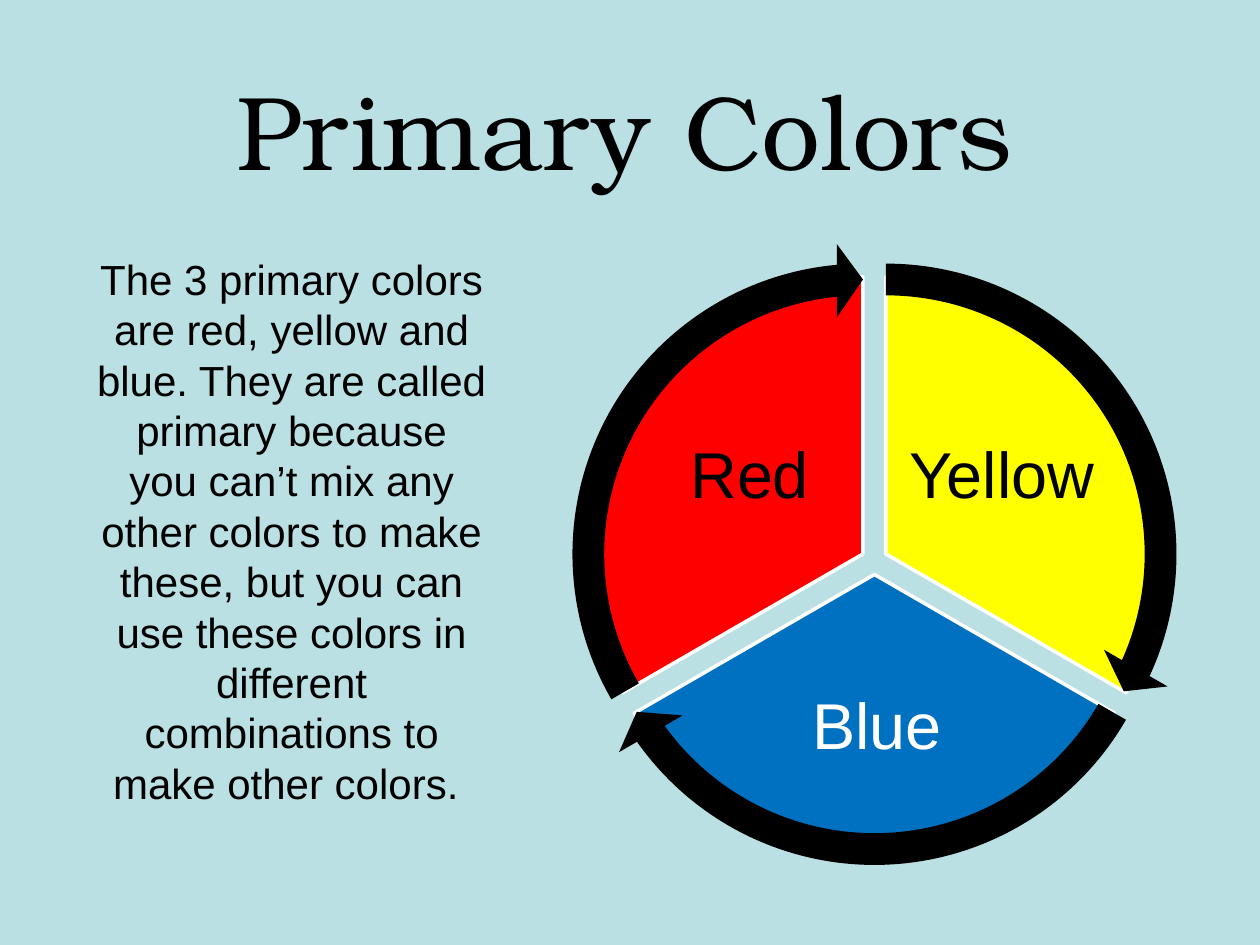
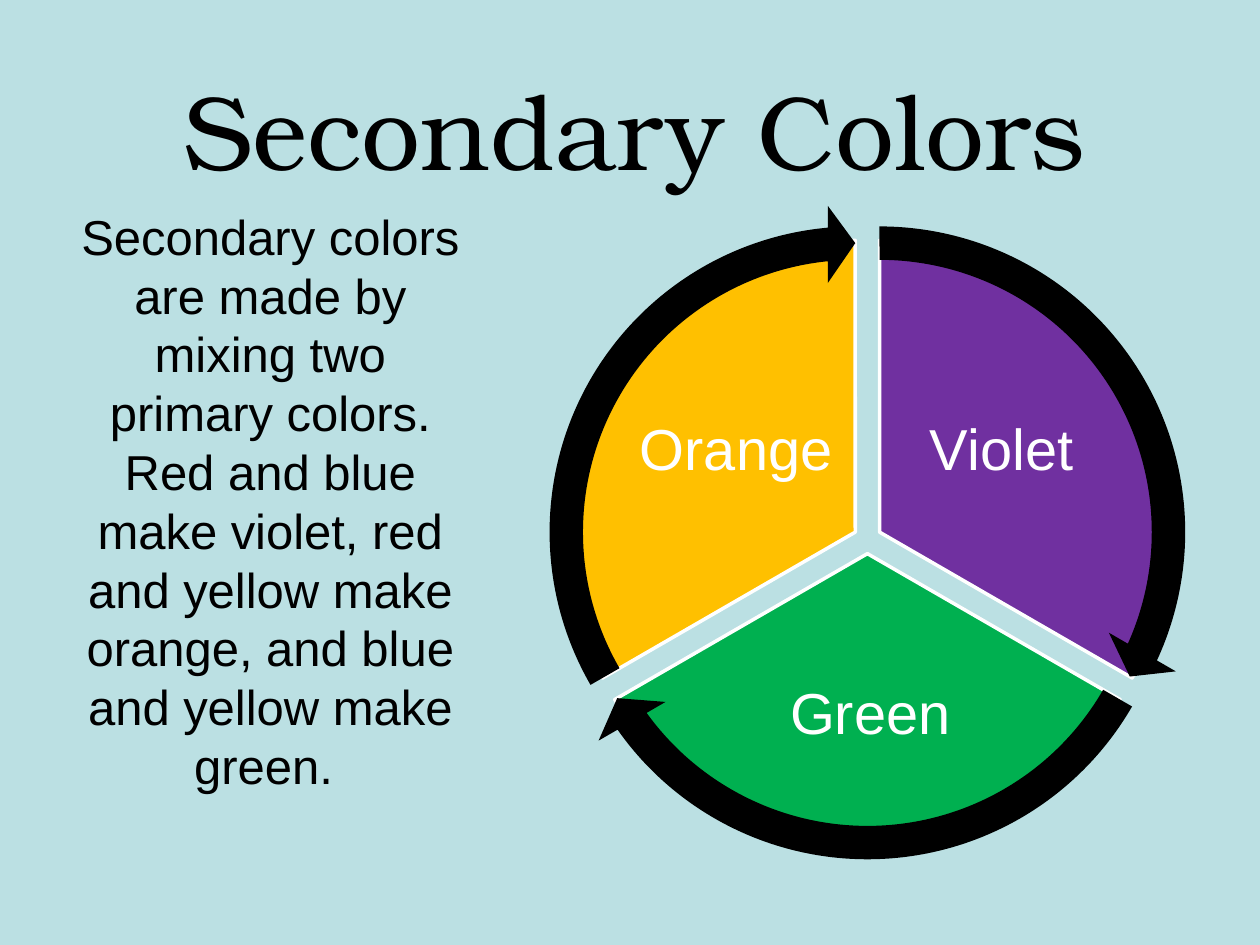
"""Build two slides on primary and secondary colors, each with a three-part color wheel."""
from pptx import Presentation
from pptx import util as u
from pptx.dml.color import RGBColor
from pptx.enum import shapes, text
from lxml import etree

Pt = u.Pt
PALE_BLUE = RGBColor(0xBB, 0xE0, 0xE3)
BLACK = RGBColor(0, 0, 0)
WHITE = RGBColor(0xFF, 0xFF, 0xFF)
YELLOW = RGBColor(0xFF, 0xFF, 0)
BLUE = RGBColor(0, 0x70, 0xC0)
RED = RGBColor(0xFF, 0, 0)
VIOLET = RGBColor(0x70, 0x30, 0xA0)
GREEN = RGBColor(0, 0xB0, 0x50)
ORANGE = RGBColor(0xFF, 0xC0, 0)
DRAWING = "{http://schemas.openxmlformats.org/drawingml/2006/main}"

PAGES = [
    {"title": "Primary Colors", "title_width": 641.5,
     "body": "The 3 primary colors are red, yellow and blue. They are called primary "
             "because you can’t mix any other colors to make these, but you can use "
             "these colors in different combinations to make other colors. ",
     "body_size": 24, "body_at": (48.2, 139.7),
     "hub": (499.7, 328.3), "diameter": 316.8, "label_size": 37,
     "parts": [("Yellow", YELLOW, BLACK), ("Blue", BLUE, WHITE), ("Red", RED, BLACK)]},
    {"title": "Secondary Colors", "title_width": 653,
     "body": "Secondary colors are made by mixing two primary colors. Red and blue make "
             "violet, red and yellow make orange, and blue and yellow make green. ",
     "body_size": 28, "body_at": (36, 113),
     "hub": (495.7, 316.4), "diameter": 333.4, "label_size": 33,
     "parts": [("Violet", VIOLET, WHITE), ("Green", GREEN, WHITE), ("Orange", ORANGE, WHITE)]},
]

SECTORS = [
    {"pie": (162, 18), "arrow": (0.051, 3.275, 14.725, 161.994, 0.059),
     "shift": (6.6, -11.7), "label": (0.23, -0.175, 0.357, 0.298)},
    {"pie": (18, 90), "arrow": (0.051, 3.275, 86.72, 18.005, 0.059),
     "shift": (0, 0), "label": (0.005, 0.278, 0.536, 0.261)},
    {"pie": (90, 162), "arrow": (0.051, 3.275, 158.73, 90, 0.059),
     "shift": (-6.6, -11.7), "label": (-0.225, -0.175, 0.357, 0.298)},
]


def write(box, words, size, color, font="Arial", spacing=None, **frame_format):
    """Put one centred paragraph in a box."""
    frame = box.text_frame
    settings = {"auto_size": text.MSO_AUTO_SIZE.NONE, "word_wrap": True, **frame_format}
    for name, value in settings.items():
        setattr(frame, name, value)
    para = frame.paragraphs[0]
    para.alignment = text.PP_ALIGN.CENTER
    para.space_before = Pt(0)
    para.line_spacing = spacing
    span = para.add_run()
    span.text = words
    for name, value in {"size": Pt(size), "name": font, "bold": False}.items():
        setattr(span.font, name, value)
    span.font.color.rgb = color
    return para


def add_round(wheel, kind, middle, size, fill, adjustments):
    """Add a filled round shape centred on a point."""
    x, y = middle
    shape = wheel.shapes.add_shape(kind, Pt(x - size / 2), Pt(y - size / 2), Pt(size), Pt(size))
    for index, value in enumerate(adjustments):
        shape.adjustments[index] = value
    shape.shadow.inherit = False
    shape.fill.solid()
    shape.fill.fore_color.rgb = fill
    return shape


deck = Presentation()
deck.slide_width, deck.slide_height = Pt(720), Pt(540)
background = deck.slide_master.background.fill
background.solid()
background.fore_color.rgb = PALE_BLUE

for page in PAGES:
    slide = deck.slides.add_slide(deck.slide_layouts[1])
    title, body = slide.shapes.title, slide.placeholders[1]
    places = [(title, (36, 21.6, page["title_width"], 91.4)),
              (body, (*page["body_at"], 236.9, 369.4))]
    for box, place in places:
        for name, value in zip(("left", "top", "width", "height"), place):
            setattr(box, name, Pt(value))
    write(title, page["title"], 60, BLACK, "TeX Gyre Bonum",
          vertical_anchor=text.MSO_ANCHOR.BOTTOM)
    para = write(body, page["body"], page["body_size"], BLACK,
                 spacing=Pt(1.2 * page["body_size"]), margin_top=Pt(5))
    properties = para._p.get_or_add_pPr()
    properties.set("marL", "0")
    properties.set("indent", "0")
    etree.SubElement(properties, DRAWING + "buNone")

    wheel = slide.shapes.add_group_shape()
    hub_x, hub_y = page["hub"]
    diameter = page["diameter"]
    scale = diameter / 316.8
    middles = [(hub_x + scale * dx, hub_y + scale * dy)
               for dx, dy in (sector["shift"] for sector in SECTORS)]

    for sector, middle, (name, fill, ink) in zip(SECTORS, middles, page["parts"]):
        pie = add_round(wheel, shapes.MSO_SHAPE.PIE, middle, diameter, fill, sector["pie"])
        pie.line.color.rgb = WHITE
        pie.line.width = Pt(2)
        dx, dy, width, height = (diameter * part for part in sector["label"])
        label = wheel.shapes.add_textbox(Pt(hub_x + dx - width / 2), Pt(hub_y + dy - height / 2),
                                         Pt(width), Pt(height))
        write(label, name, page["label_size"], ink, spacing=0.9,
              vertical_anchor=text.MSO_ANCHOR.MIDDLE, margin_left=0, margin_right=0)

    for sector, middle in zip(SECTORS, middles):
        arrow = add_round(wheel, shapes.MSO_SHAPE.CIRCULAR_ARROW, middle, 1.123 * diameter,
                          BLACK, sector["arrow"])
        arrow.line.fill.background()

deck.save("out.pptx")
